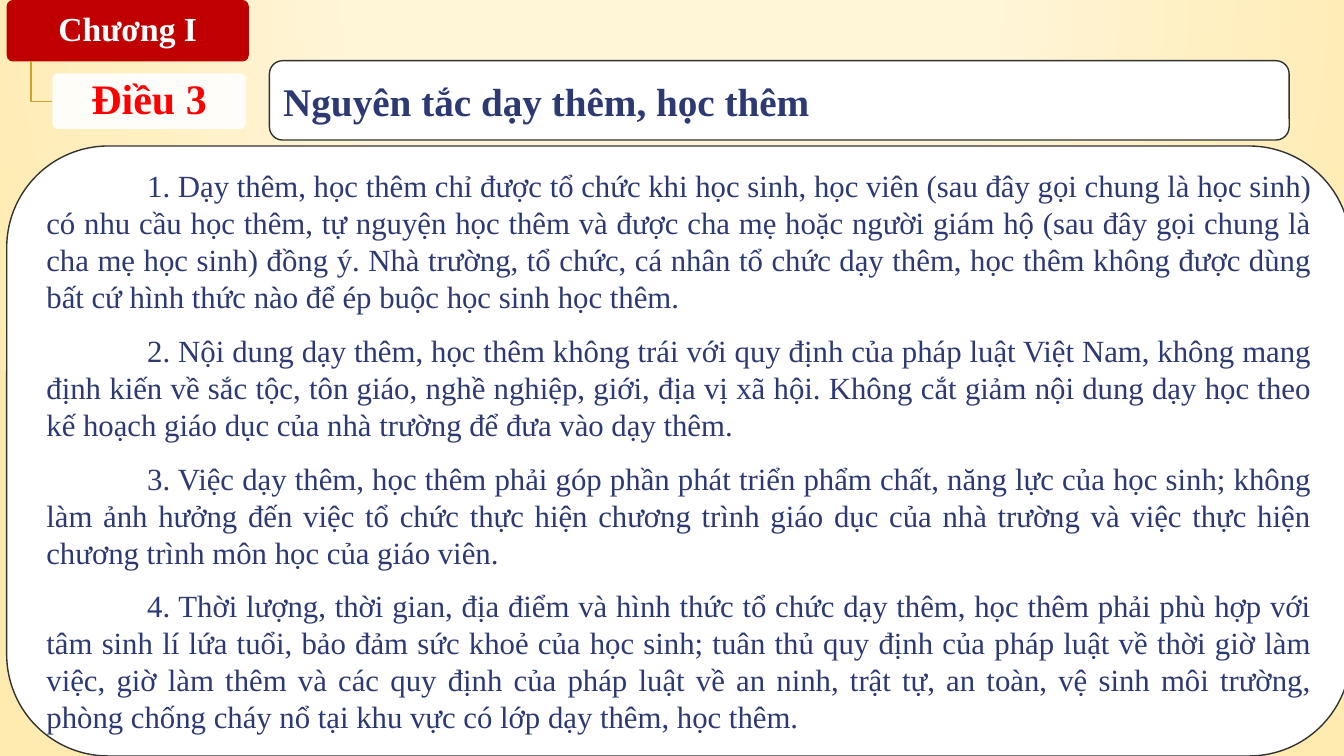
from dataclasses import dataclass

from lxml.etree import SubElement
from pptx import Presentation
from pptx.dml.color import RGBColor
from pptx.enum.shapes import MSO_SHAPE
from pptx.enum.text import MSO_ANCHOR, PP_ALIGN
from pptx.oxml.ns import qn
from pptx.util import Cm, Pt


@dataclass(frozen=True)
class Theme:
    """Colours, type sizes and font of the slide."""
    font: str = "Times New Roman"
    red: str = "C00000"
    bright: str = "FF0000"
    white: str = "FFFFFF"
    navy: str = "2C3973"
    edge: str = "323232"
    gold: str = "CCA42B"
    glow: tuple = ((0, "FFF5D7", 59), (40, "FFF5D7", 66), (100, "FFEBAF", 100))
    small: int = 22
    label: int = 24
    title: int = 28
    large: int = 30


THEME = Theme()

RULES = (
    "1. Dạy thêm, học thêm chỉ được tổ chức khi học sinh, học viên (sau đây gọi chung là học sinh) "
    "có nhu cầu học thêm, tự nguyện học thêm và được cha mẹ hoặc người giám hộ (sau đây gọi chung là "
    "cha mẹ học sinh) đồng ý. Nhà trường, tổ chức, cá nhân tổ chức dạy thêm, học thêm không được dùng "
    "bất cứ hình thức nào để ép buộc học sinh học thêm.",
    "2. Nội dung dạy thêm, học thêm không trái với quy định của pháp luật Việt Nam, không mang "
    "định kiến về sắc tộc, tôn giáo, nghề nghiệp, giới, địa vị xã hội. Không cắt giảm nội dung dạy học theo "
    "kế hoạch giáo dục của nhà trường để đưa vào dạy thêm.",
    "3. Việc dạy thêm, học thêm phải góp phần phát triển phẩm chất, năng lực của học sinh; không "
    "làm ảnh hưởng đến việc tổ chức thực hiện chương trình giáo dục của nhà trường và việc thực hiện "
    "chương trình môn học của giáo viên.",
    "4. Thời lượng, thời gian, địa điểm và hình thức tổ chức dạy thêm, học thêm phải phù hợp với "
    "tâm sinh lí lứa tuổi, bảo đảm sức khoẻ của học sinh; tuân thủ quy định của pháp luật về thời giờ làm "
    "việc, giờ làm thêm và các quy định của pháp luật về an ninh, trật tự, an toàn, vệ sinh môi trường, "
    "phòng chống cháy nổ tại khu vực có lớp dạy thêm, học thêm.",
)


def fade(color, share):
    """Give a colour element an opacity in percent."""
    SubElement(color, qn("a:alpha"), val=str(share * 1000))


def paint(slide):
    """Fill the background with a round glow centred above the slide."""
    fill = slide.background.fill
    fill.gradient()
    grad = slide.background._cSld.bg.bgPr.find(qn("a:gradFill"))
    for child in list(grad):
        grad.remove(child)
    stops = SubElement(grad, qn("a:gsLst"))
    for place, tint, share in THEME.glow:
        stop = SubElement(stops, qn("a:gs"), pos=str(place * 1000))
        fade(SubElement(stop, qn("a:srgbClr"), val=tint), share)
    ring = SubElement(grad, qn("a:path"), path="circle")
    SubElement(ring, qn("a:fillToRect"), l="50000", t="-80000", r="50000", b="180000")


def panel(slide, box, fill, edge=None, curve=None):
    """Add a rounded box, outlined if an edge colour is given."""
    shape = slide.shapes.add_shape(MSO_SHAPE.ROUNDED_RECTANGLE, *map(Cm, box))
    shape.shadow.inherit = False
    shape.fill.solid()
    shape.fill.fore_color.rgb = RGBColor.from_string(fill)
    if edge:
        shape.line.color.rgb = RGBColor.from_string(edge)
        shape.line.width = Pt(1)
    else:
        shape.line.fill.background()
    if curve:
        shape.adjustments[0] = curve
    return shape


def write(shape, texts, size, color, align, bold=False, gap=0, pitch=None, indent=0):
    """Set the text of a shape, one paragraph for each item."""
    frame = shape.text_frame
    frame.word_wrap = True
    frame.vertical_anchor = MSO_ANCHOR.MIDDLE
    for index, text in enumerate(texts):
        para = frame.paragraphs[0] if index == 0 else frame.add_paragraph()
        para.text = text
        para.alignment = align
        para.space_before = para.space_after = Pt(gap)
        para.line_spacing = pitch
        para.font.name = THEME.font
        para.font.size = Pt(size)
        para.font.bold = bold
        para.font.color.rgb = RGBColor.from_string(color)
        if indent:
            props = para._p.get_or_add_pPr()
            props.set("marL", "0")
            props.set("indent", str(Cm(indent)))


def card(slide, box, fill, text, size, color):
    """Add a borderless label card."""
    shape = panel(slide, box, fill, curve=0.1)
    write(shape, [text], size, color, PP_ALIGN.CENTER, bold=True, pitch=0.9)
    frame = shape.text_frame
    frame.margin_left = frame.margin_right = Cm(0.15)
    frame.margin_top = frame.margin_bottom = Cm(0.1)
    return shape


def elbow(slide, start, *points):
    """Draw an open bent line through the points."""
    pen = slide.shapes.build_freeform(*map(Cm, start))
    pen.add_line_segments([tuple(map(Cm, point)) for point in points], close=False)
    shape = pen.convert_to_shape()
    shape.shadow.inherit = False
    shape.fill.background()
    shape.line.color.rgb = RGBColor.from_string(THEME.gold)
    shape.line.width = Pt(1)


def main():
    """Build the slide and save it."""
    deck = Presentation()
    deck.slide_width, deck.slide_height = Cm(33.87), Cm(19.05)
    slide = deck.slides.add_slide(deck.slide_layouts[6])
    paint(slide)

    card(slide, (0.17, 0, 6.1, 1.55), THEME.red, "Chương I", THEME.label, THEME.white)
    elbow(slide, (0.78, 1.55), (0.78, 2.56), (1.32, 2.56))
    label = card(slide, (1.32, 1.85, 4.88, 1.4), THEME.white, "Điều 3", THEME.large, THEME.bright)
    fade(label.fill._xPr.find(qn("a:solidFill"))[0], 90)

    body = panel(slide, (0.17, 3.68, 33.87, 15.37), THEME.white, THEME.edge)
    write(body, RULES, THEME.small, THEME.navy, PP_ALIGN.JUSTIFY, gap=6, indent=2.54)
    head = panel(slide, (6.79, 1.53, 25.7, 2), THEME.white, THEME.edge)
    write(head, ["Nguyên tắc dạy thêm, học thêm"], THEME.title, THEME.navy, PP_ALIGN.LEFT, bold=True)

    deck.save("out.pptx")


if __name__ == "__main__":
    main()
